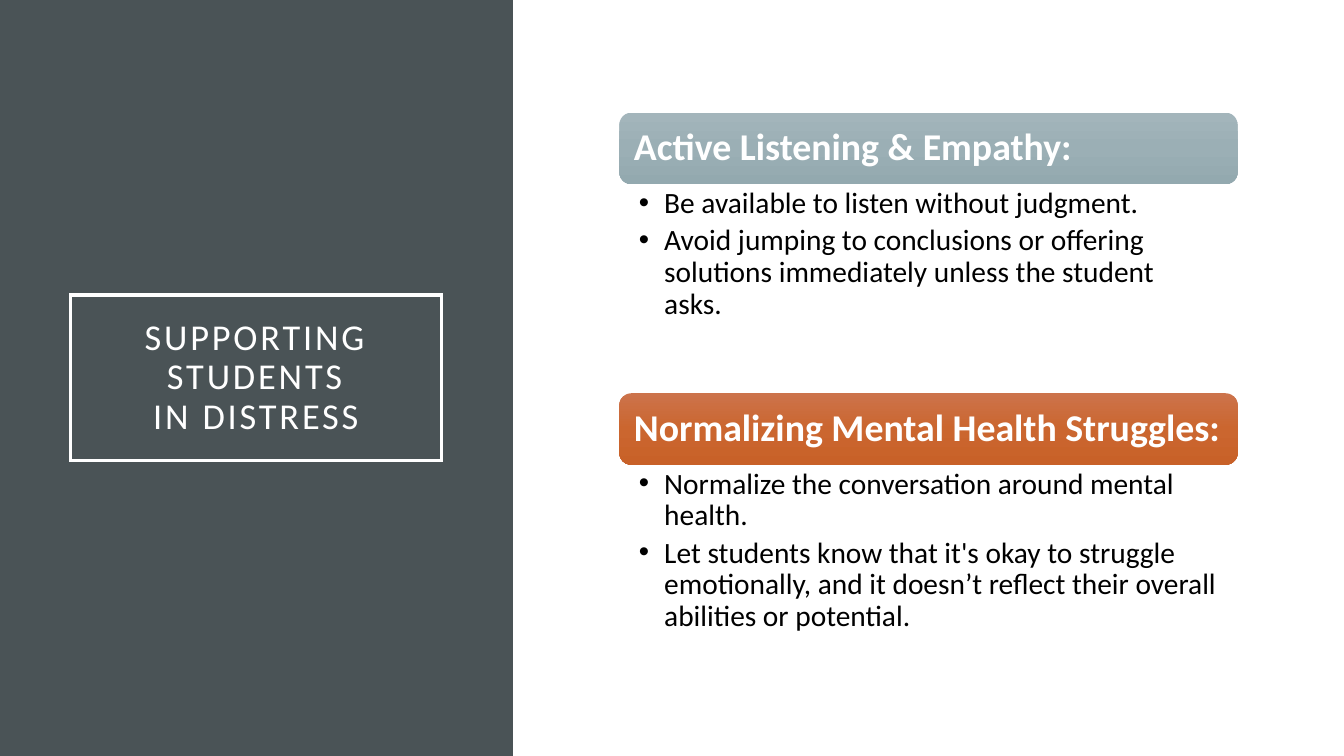
"""Build the slide on supporting students in distress."""
from copy import deepcopy
from dataclasses import dataclass

from lxml.etree import SubElement
from pptx import Presentation
from pptx.dml.color import RGBColor
from pptx.enum.shapes import MSO_SHAPE as Kind
from pptx.enum.text import MSO_ANCHOR as Anchor, PP_ALIGN as Align
from pptx.oxml.ns import qn
from pptx.util import Cm, Pt

WHITE, BLACK, SLATE = "FFFFFF", "000000", "4A5356"
LEFT, WIDTH, TOP, HEAD = 15.61, 15.58, 2.84, 1.8
HARD_SPACE = chr(160)
TITLE = HARD_SPACE.join(["SUPPORTING STUDENTS IN", "DISTRESS"])


@dataclass
class Topic:
    """A heading bar with the points below it."""
    head: str
    fades: list[str]
    points: list[str]
    depth: float


TOPICS = [
    Topic("Active Listening & Empathy:", ["A3B5BB", "9BAFB5", "93A9AF"], [
        "Be available to listen without judgment.",
        "Avoid jumping to conclusions or offering solutions immediately unless the student asks.",
    ], 5.27),
    Topic("Normalizing Mental Health Struggles:", ["CC734B", "CB662F", "C86128"], [
        "Normalize the conversation around mental health.",
        "Let students know that it's okay to struggle emotionally, "
        "and it doesn’t reflect their overall abilities or potential.",
    ], 4.5),
]


def color(code: str) -> RGBColor:
    """Turn a hex string into a colour."""
    return RGBColor.from_string(code)


def add_box(slide, kind, left: float, top: float, width: float, height: float):
    """Add a preset shape with neither fill, line nor shadow."""
    box = slide.shapes.add_shape(kind, Cm(left), Cm(top), Cm(width), Cm(height))
    box.shadow.inherit = False
    box.fill.background()
    box.line.fill.background()
    return box


def fade(box, codes: list[str]) -> None:
    """Fill a shape from top to bottom with evenly spaced colours."""
    box.fill.gradient()
    box.fill.gradient_angle = 270
    stops = box.element.spPr.find(".//" + qn("a:gsLst"))
    for _ in codes[2:]:
        stops.append(deepcopy(stops[0]))
    for i, (stop, code) in enumerate(zip(box.fill.gradient_stops, codes)):
        stop.position = i / (len(codes) - 1)
        stop.color.rgb = color(code)


def write(box, lines: list[str], *, size: float, ink: str = WHITE, bold: bool = False,
          align=Align.LEFT, anchor=Anchor.MIDDLE, pads: tuple = (0, 0, 0, 0),
          after: float = 0, track: int = 0, bullet: bool = False) -> None:
    """Write paragraphs into a shape with one shared format."""
    frame = box.text_frame
    frame.word_wrap = True
    frame.vertical_anchor = anchor
    (frame.margin_left, frame.margin_top,
     frame.margin_right, frame.margin_bottom) = map(Cm, pads)
    for i, line in enumerate(lines):
        para = frame.add_paragraph() if i else frame.paragraphs[0]
        para.alignment = align
        para.line_spacing = 0.9
        para.space_after = Pt(after)
        run = para.add_run()
        run.text = line
        font = run.font
        font.name, font.size, font.bold = "Calibri", Pt(size), bold
        font.color.rgb = color(ink)
        if track:
            run._r.get_or_add_rPr().set("spc", str(track))
        if bullet:
            props = para._p.get_or_add_pPr()
            props.set("marL", str(Cm(0.64)))
            props.set("indent", str(-Cm(0.64)))
            SubElement(props, qn("a:buFont"), typeface="Arial")
            SubElement(props, qn("a:buChar"), char="•")


def add_topic(slide, topic: Topic, top: float) -> float:
    """Draw one topic and return where the next one starts."""
    bar = add_box(slide, Kind.ROUNDED_RECTANGLE, LEFT, top, WIDTH, HEAD)
    fade(bar, topic.fades)
    write(bar, [topic.head], size=27, bold=True, pads=(0.28, 0.1, 0.2, 0.1))
    top += HEAD
    body = slide.shapes.add_textbox(Cm(LEFT), Cm(top), Cm(WIDTH), Cm(topic.depth))
    write(body, topic.points, size=21, ink=BLACK, anchor=Anchor.TOP,
          pads=(0.49, 0.1, 0.53, 0.1), after=4, bullet=True)
    return top + topic.depth


def main() -> None:
    """Build and save the deck."""
    deck = Presentation()
    deck.slide_width, deck.slide_height = Cm(33.87), Cm(19.05)
    slide = deck.slides.add_slide(deck.slide_layouts[6])

    panel = add_box(slide, Kind.RECTANGLE, 0, 0, 12.93, 19.05)
    panel.fill.solid()
    panel.fill.fore_color.rgb = color(SLATE)

    title = add_box(slide, Kind.RECTANGLE, 1.78, 7.44, 9.35, 4.17)
    title.line.color.rgb = color(WHITE)
    title.line.width = Pt(2.5)
    SubElement(title.element.spPr.find(qn("a:ln")), qn("a:miter"), lim="800000")
    write(title, [TITLE], size=26, align=Align.CENTER, pads=(0.51,) * 4, track=200)

    top = TOP
    for topic in TOPICS:
        top = add_topic(slide, topic, top)
    deck.save("out.pptx")


if __name__ == "__main__":
    main()
